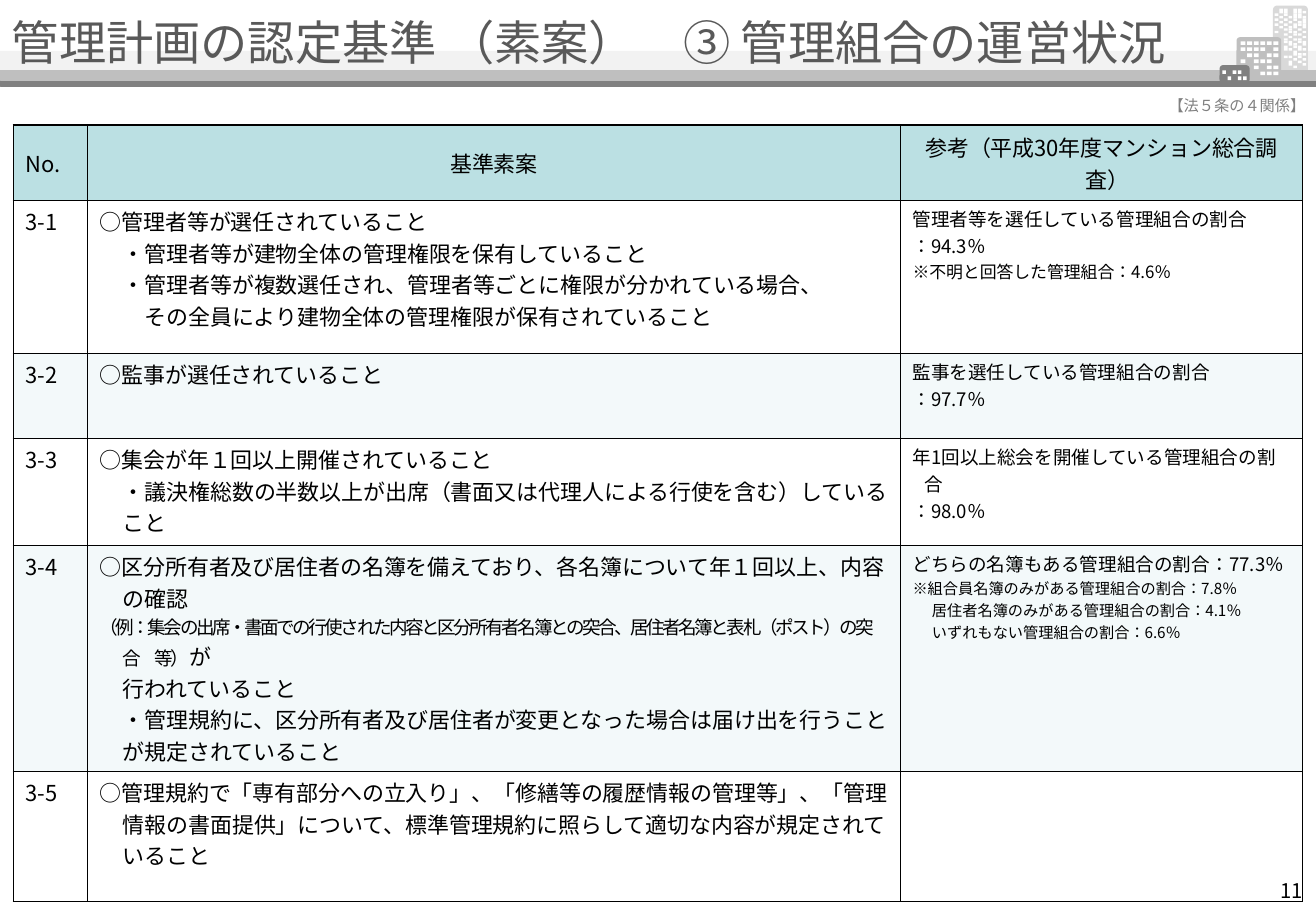
from lxml.etree import SubElement
from pptx import Presentation
from pptx.dml.color import RGBColor
from pptx.enum.shapes import MSO_SHAPE as SHAPE
from pptx.enum.text import MSO_ANCHOR as ANCHOR, PP_ALIGN as ALIGN
from pptx.oxml.ns import qn
from pptx.util import Inches, Pt

BLACK = RGBColor(0x00, 0x00, 0x00)
WHITE = RGBColor(0xFF, 0xFF, 0xFF)
TITLE_GRAY = RGBColor(0x59, 0x59, 0x59)
DARK_GRAY = RGBColor(0x80, 0x80, 0x80)
MID_GRAY = RGBColor(0xBF, 0xBF, 0xBF)
LIGHT_GRAY = RGBColor(0xD9, 0xD9, 0xD9)
PALE_GRAY = RGBColor(0xF2, 0xF2, 0xF2)
HEADER_TEAL = RGBColor(0xBB, 0xE0, 0xE3)
BAND_TEAL = RGBColor(0xF3, 0xF9, 0xFA)

TALL_WINDOWS = ["1245", "12456", "0245", "13456", "0246", "1356", "02456", "1346",
                "235", "0346", "245", "36", "245", "2356", "346", "245",
                "2356", "4", "456", "235", "46", "35", "36", "4"]
MIDDLE_WINDOWS = ["012345", "01235", "1245", "0234", "0245", "345"]
SMALL_WINDOWS = ["023", "134"]

NARROW = (0.1, -0.1)
HANG = (0.19, -0.19)
INNER = (0.19, 0)
DEEP = (0.37, 0)
NOTE = (0.16, 0)

COLUMNS = [0.61, 6.69, 3.31]
HEIGHTS = [0.5, 1.26, 0.7, 0.88, 1.78, 1.07]
HEADERS = [("No.", ALIGN.LEFT), ("基準素案", ALIGN.CENTER),
           ("参考（平成30年度マンション総合調査）", ALIGN.CENTER)]
CRITERIA = [
    [(HANG, [("○管理者等が選任されていること", 13)]),
     (INNER, [("・管理者等が建物全体の管理権限を保有していること", 13)]),
     (INNER, [("・管理者等が複数選任され、管理者等ごとに権限が分かれている場合、", 13)]),
     (DEEP, [("その全員により建物全体の管理権限が保有されていること", 13)])],
    [(HANG, [("○監事が選任されていること", 13)])],
    [(HANG, [("○集会が年１回以上開催されていること", 13)]),
     (INNER, [("・議決権総数の半数以上が出席（書面又は代理人による行使を含む）していること", 13)])],
    [(HANG, [("○区分所有者及び居住者の名簿を備えており、各名簿について年１回以上、内容の確認", 13)]),
     (HANG, [("（例：集会の出席・書面での行使された内容と区分所有者名簿との突合、"
              "居住者名簿と表札（ポスト）の突合　等）", 11, -1.5), ("が", 13)]),
     (INNER, [("行われていること", 13)]),
     (INNER, [("・管理規約に、区分所有者及び居住者が変更となった場合は届け出を行うことが規定されていること", 13)])],
    [(HANG, [("○管理規約で「専有部分への立入り」、「修繕等の履歴情報の管理等」、「管理情報の書面提供」"
              "について、標準管理規約に照らして適切な内容が規定されていること", 13)])],
]
REFERENCES = [
    [(NARROW, [("管理者等を選任している管理組合の割合", 11)]),
     (NARROW, [("：94.3％", 11)]),
     (NARROW, [("※不明と回答した管理組合：4.6％", 10)])],
    [(NARROW, [("監事を選任している管理組合の割合", 11)]),
     (NARROW, [("：97.7％", 11)])],
    [(NARROW, [("年1回以上総会を開催している管理組合の割合", 11)]),
     (NARROW, [("：98.0％", 11)])],
    [(NARROW, [("どちらの名簿もある管理組合の割合：77.3％", 11)]),
     (NARROW, [("※組合員名簿のみがある管理組合の割合：7.8％", 9)]),
     (NOTE, [("居住者名簿のみがある管理組合の割合：4.1％", 9)]),
     (NOTE, [("いずれもない管理組合の割合：6.6％", 9)])],
    [],
]


class Deck:
    font = "Noto Sans CJK JP"

    def __init__(self, width, height):
        self.prs = Presentation()
        self.prs.slide_width, self.prs.slide_height = Inches(width), Inches(height)
        self.slide = self.prs.slides.add_slide(self.prs.slide_layouts[6])

    def run(self, p, text, size, color=BLACK, spacing=0):
        r = p.add_run()
        r.text = text
        r.font.size, r.font.name = Pt(size), self.font
        r.font.color.rgb = color
        rPr = r._r.get_or_add_rPr()
        rPr.set("lang", "ja-JP")
        if spacing:
            rPr.set("spc", str(int(spacing * 100)))
        SubElement(rPr, qn("a:ea"), typeface=self.font)

    def text(self, x, y, w, h, text, size, color, align, anchor):
        tf = self.slide.shapes.add_textbox(*map(Inches, (x, y, w, h))).text_frame
        tf.word_wrap, tf.vertical_anchor = True, anchor
        p = tf.paragraphs[0]
        p.alignment = align
        self.run(p, text, size, color)

    def box(self, x, y, w, h, fill, line=0, radius=None):
        kind = SHAPE.RECTANGLE if radius is None else SHAPE.ROUNDED_RECTANGLE
        s = self.slide.shapes.add_shape(kind, *map(Inches, (x, y, w, h)))
        s.shadow.inherit = False
        s.fill.solid()
        s.fill.fore_color.rgb = fill
        if radius is not None:
            s.adjustments[0] = radius
        if line:
            s.line.color.rgb, s.line.width = fill, Pt(line)
        else:
            s.line.fill.background()

    def windows(self, rows, columns, x, y, right, bottom, w, h):
        dx = (right - x) / (columns - 1)
        dy = (bottom - y) / (len(rows) - 1)
        for i, row in enumerate(rows):
            for column in map(int, row):
                self.box(x + column * dx, y + i * dy, w, h, WHITE)

    def cell(self, cell, paragraphs, fill=None, align=ALIGN.LEFT, anchor=ANCHOR.TOP, margin=0.04):
        cell.vertical_anchor = anchor
        cell.margin_left = cell.margin_right = Inches(0.1)
        cell.margin_top = cell.margin_bottom = Inches(margin)
        tcPr = cell._tc.get_or_add_tcPr()
        for side in ("a:lnL", "a:lnR", "a:lnT", "a:lnB"):
            ln = SubElement(tcPr, qn(side), w=str(Pt(1)))
            SubElement(SubElement(ln, qn("a:solidFill")), qn("a:srgbClr"), val=str(BLACK))
        if fill is None:
            cell.fill.background()
        else:
            cell.fill.solid()
            cell.fill.fore_color.rgb = fill
        tf = cell.text_frame
        for i, ((left, indent), runs) in enumerate(paragraphs):
            p = tf.add_paragraph() if i else tf.paragraphs[0]
            p.alignment = align
            pPr = p._p.get_or_add_pPr()
            pPr.set("marL", str(Inches(left)))
            pPr.set("indent", str(Inches(indent)))
            for text, size, *spacing in runs:
                self.run(p, text, size, BLACK, *spacing)

    def table(self, x, y, columns, heights):
        frame = self.slide.shapes.add_table(len(heights), len(columns), Inches(x), Inches(y),
                                            Inches(sum(columns)), Inches(sum(heights)))
        table = frame.table
        table.first_row = table.horz_banding = False
        for column, width in zip(table.columns, columns):
            column.width = Inches(width)
        for row, height in zip(table.rows, heights):
            row.height = Inches(height)
        return table


def main():
    deck = Deck(10.83, 7.5)
    deck.box(0, 0.42, 10.83, 0.16, PALE_GRAY, 0.25)
    deck.box(10.49, 0.06, 0.26, 0.55, LIGHT_GRAY, 2, 0.08)
    deck.windows(TALL_WINDOWS, 7, 10.49, 0.07, 10.72, 0.54, 0.03, 0.02)
    deck.box(0, 0.66, 10.83, 0.05, DARK_GRAY, 0.25)
    deck.box(0, 0.58, 10.83, 0.08, MID_GRAY, 0.25)
    deck.box(10.19, 0.32, 0.34, 0.32, MID_GRAY, 2, 0.05)
    deck.windows(MIDDLE_WINDOWS, 6, 10.21, 0.34, 10.48, 0.59, 0.04, 0.03)
    deck.box(10.05, 0.55, 0.22, 0.12, DARK_GRAY, 2, 0.14)
    deck.windows(SMALL_WINDOWS, 5, 10.06, 0.58, 10.23, 0.63, 0.03, 0.03)

    table = deck.table(0.11, 1.03, COLUMNS, HEIGHTS)
    for column, (label, align) in enumerate(HEADERS):
        deck.cell(table.cell(0, column), [(NARROW, [(label, 13)])],
                  HEADER_TEAL, align, ANCHOR.MIDDLE, 0.05)
    for row, (criteria, reference) in enumerate(zip(CRITERIA, REFERENCES), 1):
        number = [(NARROW, [(f"3-{row}", 13)])]
        fill = None if row % 2 else BAND_TEAL
        for column, paragraphs in enumerate((number, criteria, reference)):
            deck.cell(table.cell(row, column), paragraphs, fill)

    deck.text(0, 0.08, 9.98, 0.52, "管理計画の認定基準 （素案）　③ 管理組合の運営状況",
              28, TITLE_GRAY, ALIGN.LEFT, ANCHOR.MIDDLE)
    deck.text(9.28, 0.74, 1.56, 0.25, "【法５条の４関係】", 9, DARK_GRAY, ALIGN.RIGHT, ANCHOR.TOP)
    deck.text(8.29, 6.96, 2.53, 0.52, "11", 12, BLACK, ALIGN.RIGHT, ANCHOR.BOTTOM)
    deck.prs.save("out.pptx")


if __name__ == "__main__":
    main()
